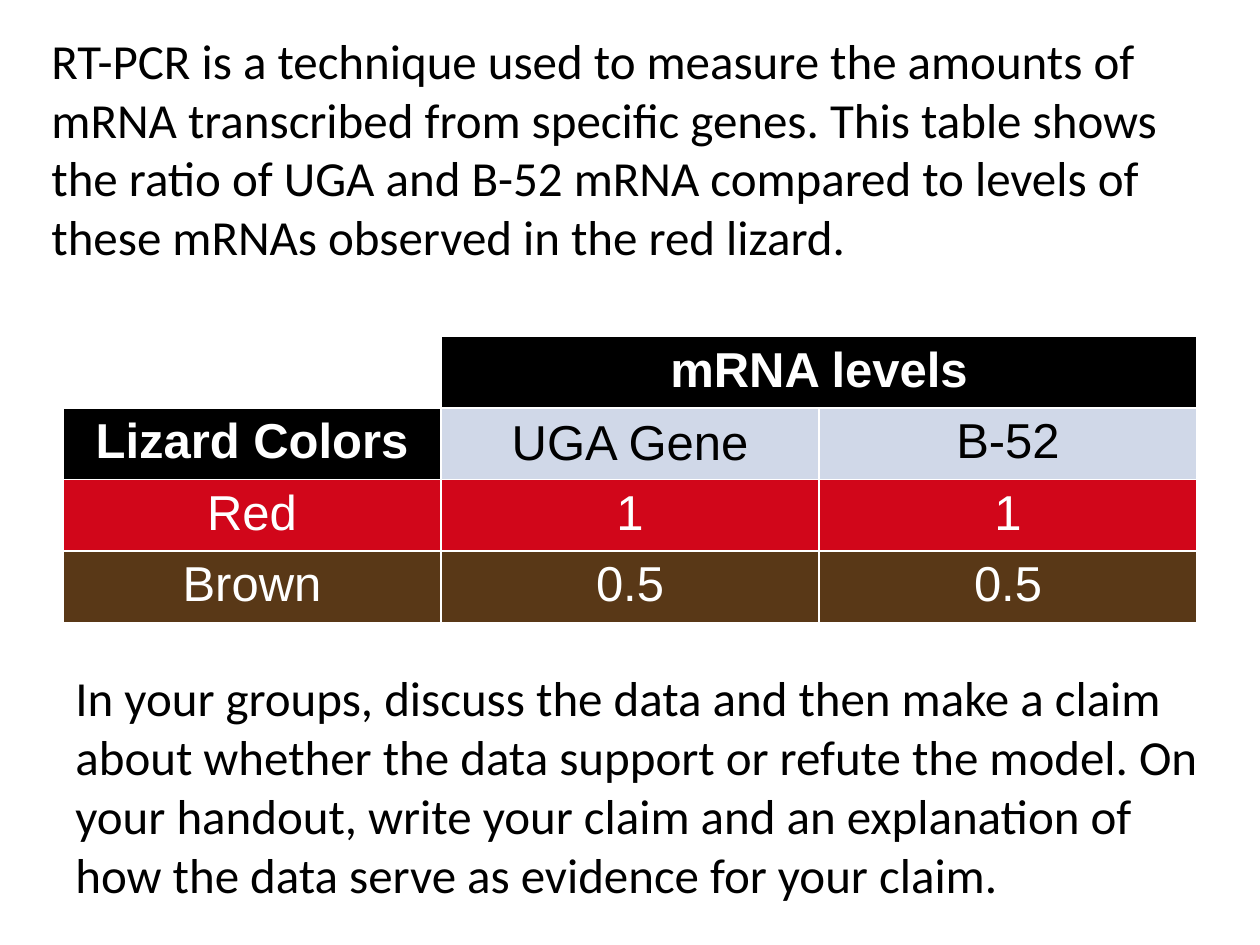
from pptx import Presentation
from pptx.dml.color import RGBColor
from pptx.enum.text import MSO_ANCHOR, PP_ALIGN
from pptx.util import Inches, Pt

BLACK = RGBColor(0x00, 0x00, 0x00)
WHITE = RGBColor(0xFF, 0xFF, 0xFF)
PALE_BLUE = RGBColor(0xD0, 0xD8, 0xE8)
RED = RGBColor(0xD1, 0x06, 0x1A)
BROWN = RGBColor(0x59, 0x38, 0x17)


def write_text(text_frame, text, font="Calibri", size=28, color=BLACK,
               bold=False, align=PP_ALIGN.LEFT):
    paragraph = text_frame.paragraphs[0]
    paragraph.alignment = align
    run = paragraph.add_run()
    run.text = text
    run.font.name = font
    run.font.size = Pt(size)
    run.font.bold = bold
    run.font.color.rgb = color


presentation = Presentation()
presentation.slide_width = Inches(10)
presentation.slide_height = Inches(7.5)
slide = presentation.slides.add_slide(presentation.slide_layouts[6])

# Introduction above the table, task below it
passages = [
    (0.31, 0.19, 2.38,
     "RT-PCR is a technique used to measure the amounts of mRNA transcribed "
     "from specific genes. This table shows the ratio of UGA and B-52 mRNA "
     "compared to levels of these mRNAs observed in the red lizard."),
    (0.5, 5.25, 1.82,
     "In your groups, discuss the data and then make a claim about whether "
     "the data support or refute the model. On your handout, write your claim "
     "and an explanation of how the data serve as evidence for your claim."),
]
for left, top, height, text in passages:
    text_box = slide.shapes.add_textbox(
        Inches(left), Inches(top), Inches(9.19), Inches(height))
    text_box.text_frame.word_wrap = True
    write_text(text_box.text_frame, text)

# Each cell: text, fill, text colour, bold
heading = (BLACK, WHITE, True)
gene = (PALE_BLUE, BLACK, False)
red = (RED, WHITE, False)
brown = (BROWN, WHITE, False)
rows = [
    [("", WHITE, BLACK, False), ("mRNA levels", *heading), ("", *heading)],
    [("Lizard Colors", *heading), ("UGA Gene", *gene), ("B-52", *gene)],
    [(text, *red) for text in ("Red", "1", "1")],
    [(text, *brown) for text in ("Brown", "0.5", "0.5")],
]
row_heights = [0.57, 0.53, 0.53, 0.53]

table = slide.shapes.add_table(
    len(rows), 3, Inches(0.5), Inches(2.67), Inches(9),
    Inches(sum(row_heights))).table
table.cell(0, 1).merge(table.cell(0, 2))
for row_index, row in enumerate(rows):
    table.rows[row_index].height = Inches(row_heights[row_index])
    for column_index, (text, fill, color, bold) in enumerate(row):
        cell = table.cell(row_index, column_index)
        cell.fill.solid()
        cell.fill.fore_color.rgb = fill
        if text:
            write_text(cell.text_frame, text, font="Arial", color=color,
                       bold=bold, align=PP_ALIGN.CENTER)
table.cell(1, 1).vertical_anchor = MSO_ANCHOR.MIDDLE

presentation.save("out.pptx")
